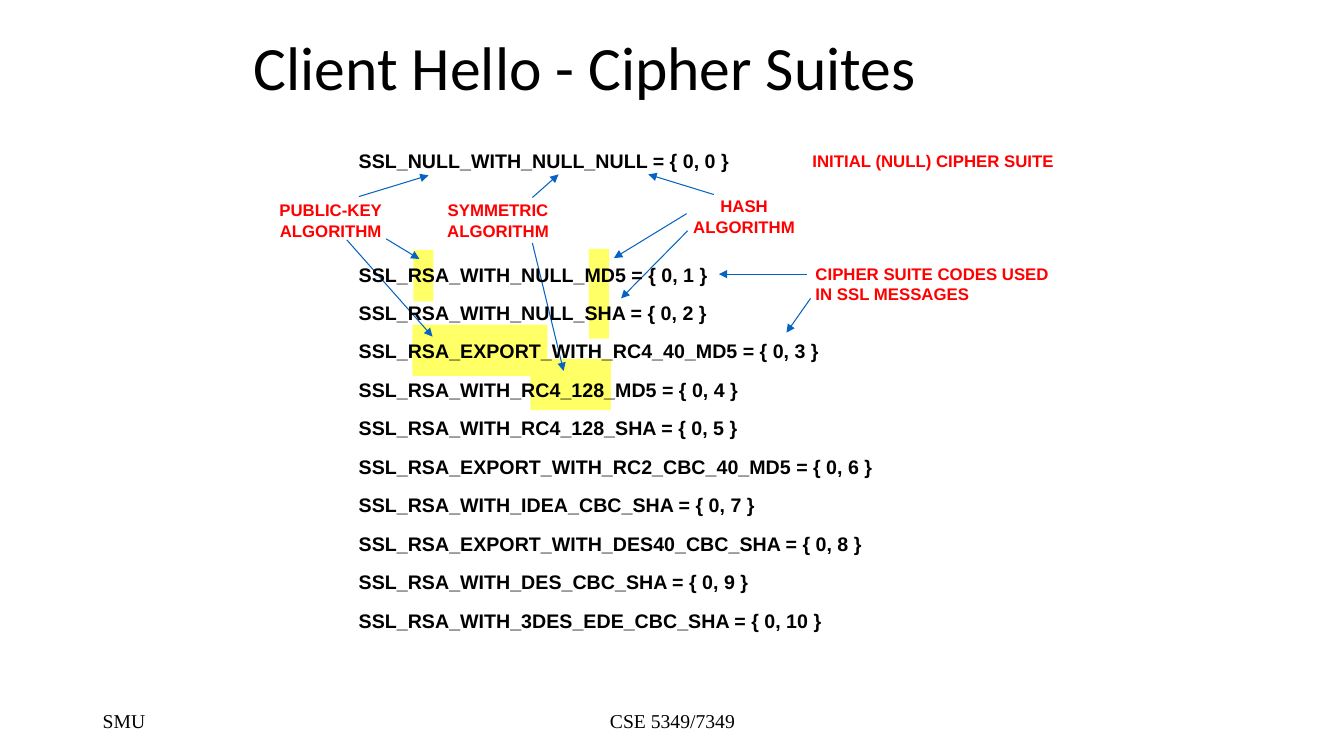
from lxml import etree
from pptx import Presentation
from pptx.dml.color import RGBColor
from pptx.enum.shapes import MSO_CONNECTOR, MSO_SHAPE
from pptx.enum.text import MSO_ANCHOR, PP_ALIGN
from pptx.oxml.ns import qn
from pptx.util import Inches, Pt

LEFT, CENTER = PP_ALIGN.LEFT, PP_ALIGN.CENTER
MIDDLE, BOTTOM = MSO_ANCHOR.MIDDLE, MSO_ANCHOR.BOTTOM
RECT, STRAIGHT = MSO_SHAPE.RECTANGLE, MSO_CONNECTOR.STRAIGHT

BLACK, RED, BLUE, YELLOW = "000000", "FF0000", "0563C1", "FFFF66"
SERIF = "Times New Roman"


def rgb(value):
    return RGBColor.from_string(value)


def add_text(p, text, font="Arial", size=14, color=BLACK, bold=False,
             align=LEFT, before=0, line_spacing=None):
    p.alignment = align
    p.space_before = Pt(before)
    p.line_spacing = line_spacing
    r = p.add_run()
    r.text = text
    r.font.name = font
    r.font.size = Pt(size)
    r.font.bold = bold
    r.font.color.rgb = rgb(color)


class SlideBuilder:
    def __init__(self, slide):
        self.s = slide

    def text(self, box, lines, anchor=MIDDLE, wrap=True, gaps=None, **fmt):
        """Add a text box; gaps holds the space before each line."""
        sp = self.s.shapes.add_textbox(*map(Inches, box))
        tf = sp.text_frame
        tf.word_wrap = wrap
        tf.vertical_anchor = anchor
        for i, line in enumerate(lines):
            p = tf.add_paragraph() if i else tf.paragraphs[0]
            add_text(p, line, before=gaps[i] if gaps else 0, **fmt)

    def label(self, box, lines, align=CENTER):
        self.text(box, lines, wrap=False, size=12, color=RED, bold=True,
                  align=align)

    def highlight(self, box):
        sp = self.s.shapes.add_shape(RECT, *map(Inches, box))
        sp.shadow.inherit = False
        sp.fill.solid()
        sp.fill.fore_color.rgb = rgb(YELLOW)
        sp.line.fill.background()

    def arrow(self, *ends):
        c = self.s.shapes.add_connector(STRAIGHT, *map(Inches, ends))
        c.line.color.rgb = rgb(BLUE)
        c.line.width = Pt(0.75)
        tail = etree.SubElement(c.line._get_or_add_ln(), qn("a:tailEnd"))
        tail.set("type", "triangle")
        etree.SubElement(c._element.spPr, qn("a:effectLst"))


def main():
    prs = Presentation()
    prs.slide_width, prs.slide_height = Inches(13.33), Inches(7.5)
    b = SlideBuilder(prs.slides.add_slide(prs.slide_layouts[6]))

    # Footer
    b.text((0.92, 6.95, 3, 0.4), ["SMU"], font=SERIF)
    b.text((4.42, 6.95, 4.5, 0.4), ["CSE 5349/7349"], font=SERIF, align=CENTER)

    # Highlights behind the suite names
    for x, y, w in [(5.26, 3.56, 0.8), (4.09, 3.22, 1.34), (4.1, 2.48, 0.2),
                    (5.84, 2.85, 0.2), (5.84, 2.47, 0.2)]:
        b.highlight((x, y, w, 0.51))

    # Title
    b.text((2.42, 0.25, 8.5, 0.83), ["Client Hello - Cipher Suites"],
           anchor=BOTTOM, font="Calibri", size=44, line_spacing=0.9)

    # Red labels
    b.label((7.96, 1.45, 2.62, 0.3), ["INITIAL (NULL) CIPHER SUITE"], LEFT)
    for x, y, kind in [(2.67, 1.93, "PUBLIC-KEY"), (4.33, 1.93, "SYMMETRIC"),
                       (6.77, 1.89, "HASH")]:
        b.label((x, y, 1.22, 0.51), [kind, "ALGORITHM"])
    b.label((7.99, 2.56, 2.54, 0.51),
            ["CIPHER SUITE CODES USED", "IN SSL MESSAGES"], LEFT)

    # Arrows from the labels to the suite parts
    for ends in [(3.83, 2.37, 4.16, 2.57), (3.44, 2.38, 4.29, 3.34),
                 (5.28, 2.41, 5.59, 3.68), (6.81, 2.12, 6.09, 2.56),
                 (6.82, 2.29, 6.16, 2.96), (3.56, 1.95, 4.25, 1.74),
                 (5.28, 1.96, 5.54, 1.73), (7.08, 1.93, 6.43, 1.73),
                 (8, 2.72, 7.13, 2.72), (8.04, 2.96, 7.8, 3.3)]:
        b.arrow(*ends)

    # Cipher suites, numbered in order
    names = ["NULL_WITH_NULL_NULL", "RSA_WITH_NULL_MD5", "RSA_WITH_NULL_SHA",
             "RSA_EXPORT_WITH_RC4_40_MD5", "RSA_WITH_RC4_128_MD5",
             "RSA_WITH_RC4_128_SHA", "RSA_EXPORT_WITH_RC2_CBC_40_MD5",
             "RSA_WITH_IDEA_CBC_SHA", "RSA_EXPORT_WITH_DES40_CBC_SHA",
             "RSA_WITH_DES_CBC_SHA", "RSA_WITH_3DES_EDE_CBC_SHA"]
    suites = [f"SSL_{name} = {{ 0, {i} }}" for i, name in enumerate(names)]
    gaps = [0, 64.3] + [10.7] * (len(suites) - 2)
    b.text((3.46, 1.45, 5.97, 4.85), suites, gaps=gaps, bold=True)

    prs.save("out.pptx")


if __name__ == "__main__":
    main()
